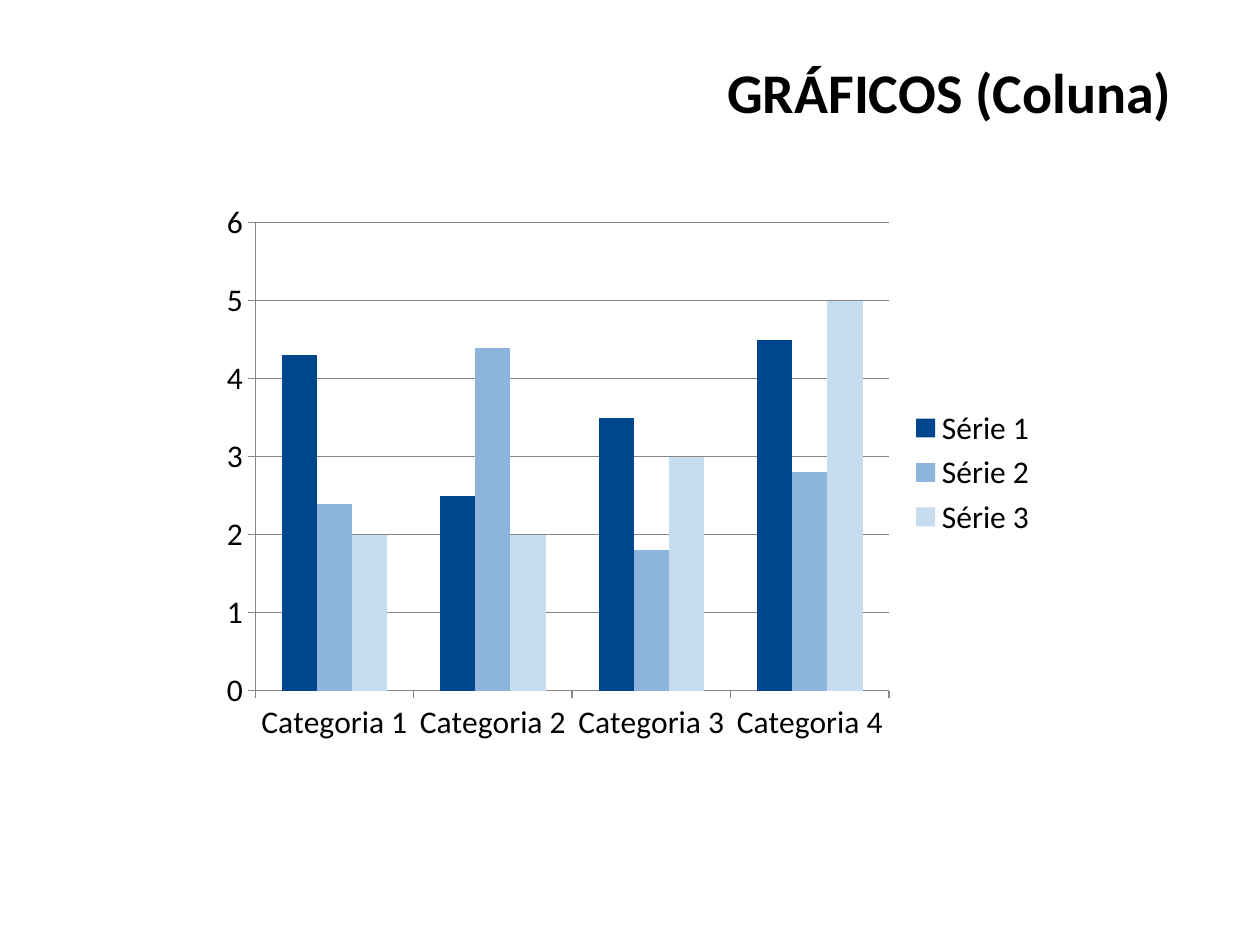
from pptx import Presentation
from pptx.chart.data import CategoryChartData
from pptx.dml.color import RGBColor
from pptx.enum.chart import XL_CHART_TYPE, XL_LEGEND_POSITION, XL_TICK_MARK
from pptx.enum.text import MSO_ANCHOR, PP_ALIGN
from pptx.util import Pt

FONT = "Calibri"
BLACK = RGBColor(0x00, 0x00, 0x00)
GRAY = RGBColor(0x87, 0x87, 0x87)
NAVY = RGBColor(0x00, 0x46, 0x8E)
SKY = RGBColor(0x8C, 0xB4, 0xDC)
PALE = RGBColor(0xC8, 0xDC, 0xF0)

CATEGORIES = [f"Categoria {n}" for n in range(1, 5)]
SERIES = [
    ("Série 1", (4.3, 2.5, 3.5, 4.5), NAVY),
    ("Série 2", (2.4, 4.4, 1.8, 2.8), SKY),
    ("Série 3", (2, 2, 3, 5), PALE),
]


def format_font(font, size, color=BLACK, bold=False):
    font.name = FONT
    font.size = Pt(size)
    font.bold = bold
    font.color.rgb = color


def add_text(s, text, left, top, width, height, align=PP_ALIGN.LEFT,
             anchor=MSO_ANCHOR.MIDDLE, **font_format):
    tf = s.shapes.add_textbox(Pt(left), Pt(top), Pt(width), Pt(height)).text_frame
    tf.word_wrap = True
    tf.vertical_anchor = anchor
    p = tf.paragraphs[0]
    p.alignment = align
    r = p.add_run()
    r.text = text
    format_font(r.font, **font_format)


def style_axis(axis, gridlines):
    axis.major_tick_mark = XL_TICK_MARK.OUTSIDE
    axis.minor_tick_mark = XL_TICK_MARK.NONE
    axis.has_major_gridlines = gridlines
    lines = [axis.format.line]
    if gridlines:
        lines.append(axis.major_gridlines.format.line)
    for line in lines:
        line.color.rgb = GRAY
        line.width = Pt(0.75)


def add_column_chart(s, left, top, width, height):
    data = CategoryChartData()
    data.categories = CATEGORIES
    for name, values, _ in SERIES:
        data.add_series(name, values)
    chart = s.shapes.add_chart(XL_CHART_TYPE.COLUMN_CLUSTERED, Pt(left), Pt(top),
                               Pt(width), Pt(height), data).chart
    format_font(chart.font, size=18)
    chart.has_title = False
    chart.has_legend = True
    chart.legend.position = XL_LEGEND_POSITION.RIGHT
    chart.legend.include_in_layout = False

    plot = chart.plots[0]
    plot.gap_width = 150
    plot.overlap = 0
    plot.vary_by_categories = False
    for series, (_, _, color) in zip(plot.series, SERIES):
        series.format.fill.solid()
        series.format.fill.fore_color.rgb = color

    style_axis(chart.category_axis, gridlines=False)
    style_axis(chart.value_axis, gridlines=True)
    chart.value_axis.minimum_scale = 0
    chart.value_axis.maximum_scale = 6
    chart.value_axis.major_unit = 1


def main():
    prs = Presentation()
    prs.slide_width, prs.slide_height = Pt(720), Pt(540)
    s = prs.slides.add_slide(prs.slide_layouts[6])
    add_text(s, "GRÁFICOS (Coluna) ", 184.5, 21.5, 499.5, 61,
             align=PP_ALIGN.RIGHT, size=32, bold=True)
    add_column_chart(s, 120, 110, 480, 320)
    prs.save("out.pptx")


if __name__ == "__main__":
    main()
